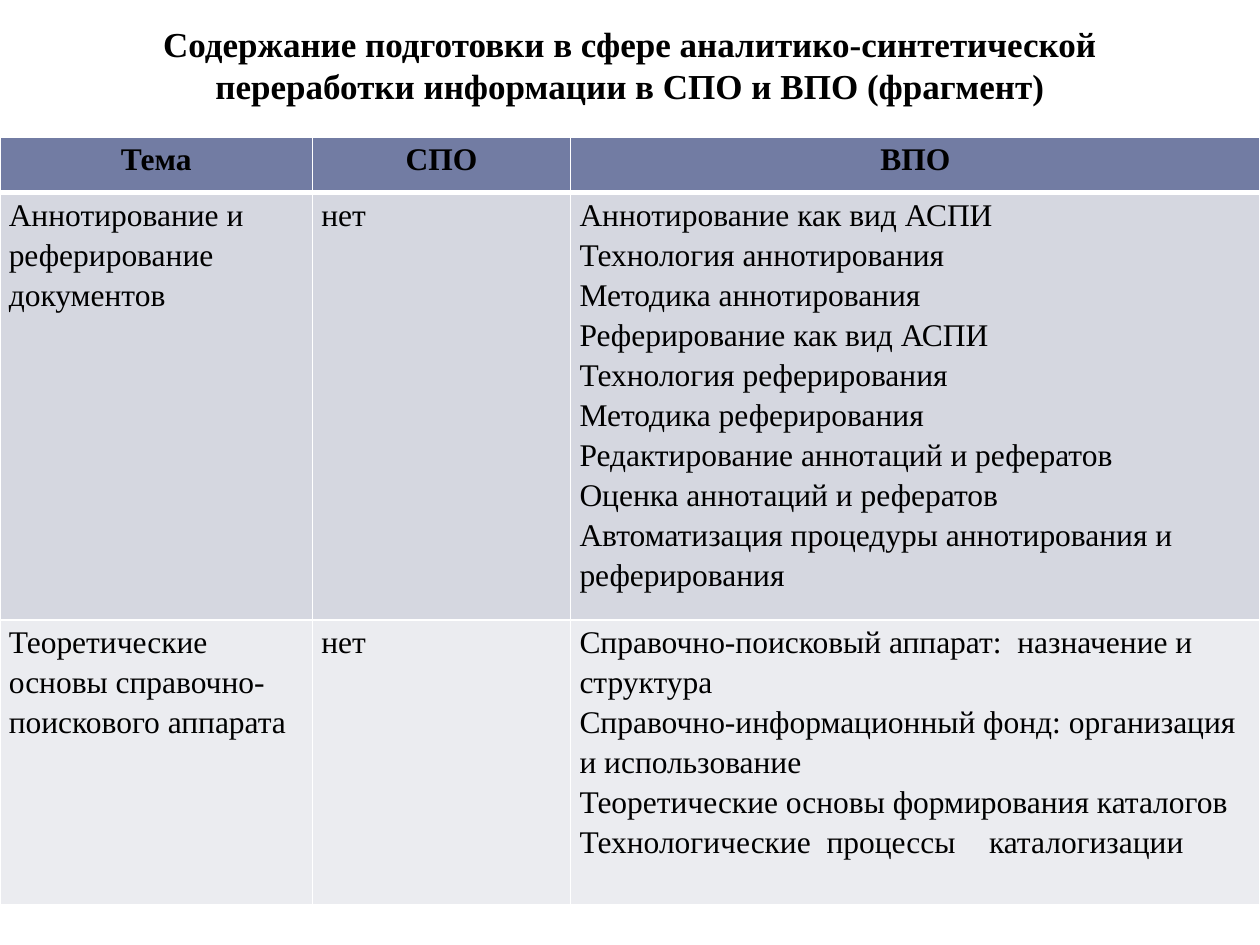
from lxml.etree import SubElement
from pptx import Presentation
from pptx.dml.color import RGBColor as RGB
from pptx.enum.text import MSO_ANCHOR as ANCHOR, PP_ALIGN as ALIGN
from pptx.oxml.ns import qn
from pptx.util import Inches, Pt

COLORS = {"text": "000000", "border": "FFFFFF", "header": "727CA3",
          "odd": "D5D7E0", "even": "EBECF0"}
TITLE = ("Содержание подготовки в сфере аналитико-синтетической "
         "переработки информации в СПО и ВПО (фрагмент)")
ROWS = [
    ["Тема", "СПО", "ВПО"],
    ["Аннотирование и реферирование документов", "нет",
     "Аннотирование как вид АСПИ\n"
     "Технология аннотирования\n"
     "Методика аннотирования\n"
     "Реферирование как вид АСПИ\n"
     "Технология реферирования\n"
     "Методика реферирования\n"
     "Редактирование аннотаций и рефератов\n"
     "Оценка аннотаций и рефератов\n"
     "Автоматизация процедуры аннотирования и реферирования"],
    ["Теоретические основы справочно-поискового аппарата", "нет",
     "Справочно-поисковый аппарат:  назначение и структура\n"
     "Справочно-информационный фонд: организация и использование\n"
     "Теоретические основы формирования каталогов\n"
     "Технологические  процессы\tкаталогизации"],
]
COL_WIDTHS = [2.48, 2.05, 5.47]
ROW_HEIGHTS = [0.44, 3.39, 2.26]
ROW_FILLS = ["header", "odd", "even"]


class Deck:
    """Holds the text style and the current slide, and adds elements to it."""

    def __init__(self, font="Times New Roman"):
        self.font = font
        self.prs = Presentation()
        self.prs.slide_width, self.prs.slide_height = Inches(10), Inches(7.5)
        self.slide = self.prs.slides.add_slide(self.prs.slide_layouts[5])

    def style(self, p, size, bold, align):
        p.alignment = align
        p.font.name, p.font.size, p.font.bold = self.font, Pt(size), bold
        p.font.color.rgb = RGB.from_string(COLORS["text"])

    def title(self, text, left, top, width, height):
        sp = self.slide.shapes.title
        sp.left, sp.top = Inches(left), Inches(top)
        sp.width, sp.height = Inches(width), Inches(height)
        tf = sp.text_frame
        tf.text, tf.word_wrap, tf.vertical_anchor = text, True, ANCHOR.MIDDLE
        self.style(tf.paragraphs[0], 20, True, ALIGN.CENTER)

    def borders(self, cell, bottom):
        tcPr = cell._tc.get_or_add_tcPr()
        for side, width in (("L", 1), ("R", 1), ("T", 1), ("B", bottom)):
            ln = SubElement(tcPr, qn(f"a:ln{side}"), w=str(Pt(width)))
            fill = SubElement(ln, qn("a:solidFill"))
            SubElement(fill, qn("a:srgbClr"), val=COLORS["border"])

    def tab_stop(self, p, pos):
        tabs = SubElement(p._p.get_or_add_pPr(), qn("a:tabLst"))
        SubElement(tabs, qn("a:tab"), pos=str(Inches(pos)), algn="l")

    def cell(self, cell, text, fill, header):
        self.borders(cell, 3 if header else 1)
        cell.fill.solid()
        cell.fill.fore_color.rgb = RGB.from_string(COLORS[fill])
        cell.margin_left = cell.margin_right = Inches(0.07)
        cell.margin_top = cell.margin_bottom = 0
        cell.text = text
        for p in cell.text_frame.paragraphs:
            if "\t" in p.text:
                self.tab_stop(p, 3.25)
            p.line_spacing = 1.15
            self.style(p, 18, header, ALIGN.CENTER if header else ALIGN.LEFT)

    def table(self, rows, left, top, widths, heights, fills):
        table = self.slide.shapes.add_table(
            len(rows), len(widths), Inches(left), Inches(top),
            Inches(sum(widths)), Inches(sum(heights))).table
        for col, width in zip(table.columns, widths):
            col.width = Inches(width)
        for i, (row, height) in enumerate(zip(table.rows, heights)):
            row.height = Inches(height)
            for cell, text in zip(row.cells, rows[i]):
                self.cell(cell, text, fills[i], i == 0)


def main():
    deck = Deck()
    deck.title(TITLE, 0.5, 0, 9, 1.02)
    deck.table(ROWS, 0, 1.09, COL_WIDTHS, ROW_HEIGHTS, ROW_FILLS)
    deck.prs.save("out.pptx")


if __name__ == "__main__":
    main()
